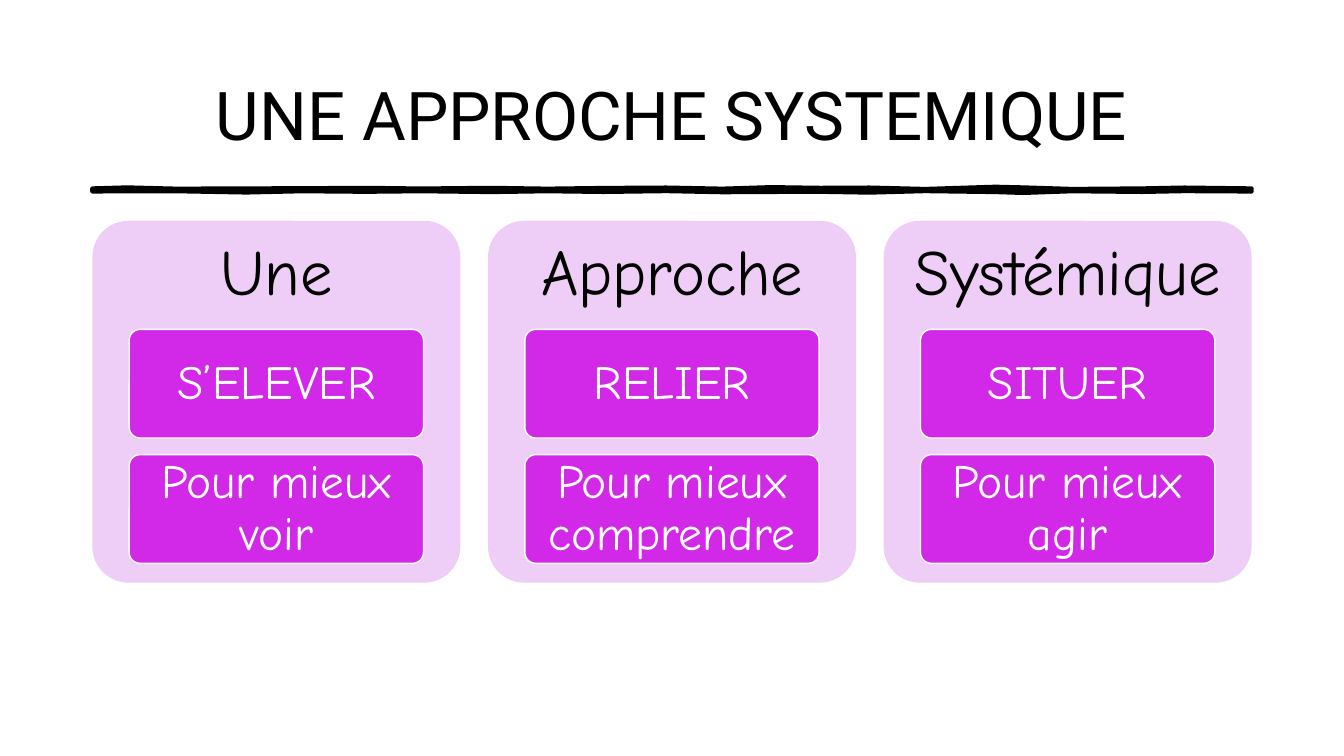
from dataclasses import dataclass

from pptx import Presentation
from pptx.dml.color import RGBColor
from pptx.enum.shapes import MSO_SHAPE
from pptx.enum.text import MSO_ANCHOR, MSO_AUTO_SIZE, PP_ALIGN
from pptx.shapes.autoshape import Shape
from pptx.slide import Slide
from pptx.util import Pt

BLACK, WHITE = "000000", "FFFFFF"
LILAC, MAGENTA = "EECDF6", "D129E7"
TITLE_FONT, BODY_FONT = "Roboto", "Comic Neue"

LEFT, CONTENT_WIDTH = 66, 828
CARD_TOP, CARD_WIDTH, CARD_HEIGHT = 157.7, 262.8, 258.5
CARD_PITCH = (CONTENT_WIDTH - CARD_WIDTH) / 2
HEADING_HEIGHT = 77.6
BOX_WIDTH, BOX_HEIGHT, BOX_PITCH = 210.2, 77.6, 89.5

# Brush stroke: distance along the rule, top edge and bottom edge
STROKE = [
    (0, 134.6, 136.8), (25, 133.9, 136.6), (60, 134.8, 136.6),
    (110, 134.6, 137.5), (150, 134.5, 136.6), (195, 134.2, 137.0),
    (235, 134.7, 136.6), (285, 134.2, 137.2), (325, 134.8, 136.6),
    (365, 134.3, 137.1), (410, 134.0, 136.5), (450, 134.8, 137.3),
    (485, 133.7, 137.1), (520, 134.2, 137.0), (555, 134.0, 137.6),
    (595, 135.0, 136.5), (645, 133.4, 137.2), (665, 133.9, 137.8),
    (700, 135.0, 136.6), (750, 134.6, 137.1), (780, 134.0, 136.5),
    (828, 134.6, 136.8),
]


@dataclass
class Card:
    heading: str
    boxes: tuple[str, str]


CARDS = [
    Card("Une", ("S’ELEVER", "Pour mieux voir")),
    Card("Approche", ("RELIER", "Pour mieux comprendre")),
    Card("Systémique", ("SITUER", "Pour mieux agir")),
]


def color(value: str) -> RGBColor:
    return RGBColor.from_string(value)


def write(shape: Shape, text: str, font: str, size: float, ink: str,
          insets: tuple[float, float], spacing: float) -> None:
    frame = shape.text_frame
    frame.word_wrap = True
    frame.auto_size = MSO_AUTO_SIZE.NONE
    frame.vertical_anchor = MSO_ANCHOR.MIDDLE
    frame.margin_left = frame.margin_right = Pt(insets[0])
    frame.margin_top = frame.margin_bottom = Pt(insets[1])
    paragraph = frame.paragraphs[0]
    paragraph.alignment = PP_ALIGN.CENTER
    paragraph.line_spacing = spacing
    run = paragraph.add_run()
    run.text = text
    run.font.name = font
    run.font.size = Pt(size)
    run.font.color.rgb = color(ink)


def add_panel(slide: Slide, left: float, top: float, width: float,
              height: float, fill: str, line: str | None = None) -> Shape:
    panel = slide.shapes.add_shape(
        MSO_SHAPE.ROUNDED_RECTANGLE, Pt(left), Pt(top), Pt(width), Pt(height))
    panel.adjustments[0] = 0.1
    panel.shadow.inherit = False
    panel.fill.solid()
    panel.fill.fore_color.rgb = color(fill)
    if line:
        panel.line.color.rgb = color(line)
        panel.line.width = Pt(1)
    else:
        panel.line.fill.background()
    return panel


def add_stroke(slide: Slide) -> None:
    top_edge = [(Pt(LEFT + x), Pt(top)) for x, top, _ in STROKE]
    bottom_edge = [(Pt(LEFT + x), Pt(bottom)) for x, _, bottom in STROKE]
    builder = slide.shapes.build_freeform(*top_edge[0])
    builder.add_line_segments(top_edge[1:] + bottom_edge[::-1], close=True)
    stroke = builder.convert_to_shape()
    stroke.shadow.inherit = False
    stroke.fill.solid()
    stroke.fill.fore_color.rgb = color(BLACK)
    stroke.line.color.rgb = color(BLACK)
    stroke.line.width = Pt(3)


def add_card(slide: Slide, card: Card, left: float) -> None:
    add_panel(slide, left, CARD_TOP, CARD_WIDTH, CARD_HEIGHT, LILAC)
    heading = slide.shapes.add_textbox(
        Pt(left), Pt(CARD_TOP), Pt(CARD_WIDTH), Pt(HEADING_HEIGHT))
    write(heading, card.heading, BODY_FONT, 46, BLACK, (13.8, 13.8), 0.9)
    box_left = left + (CARD_WIDTH - BOX_WIDTH) / 2
    for row, text in enumerate(card.boxes):
        box_top = CARD_TOP + HEADING_HEIGHT + row * BOX_PITCH
        box = add_panel(slide, box_left, box_top, BOX_WIDTH, BOX_HEIGHT,
                        MAGENTA, WHITE)
        write(box, text, BODY_FONT, 34, WHITE, (6.5, 5), 0.9)


def main() -> None:
    presentation = Presentation()
    presentation.slide_width, presentation.slide_height = Pt(960), Pt(540)
    slide = presentation.slides.add_slide(presentation.slide_layouts[5])

    # Title and brush stroke
    title = slide.shapes.title
    title.left, title.top = Pt(LEFT), Pt(28.8)
    title.width, title.height = Pt(CONTENT_WIDTH), Pt(104.4)
    write(title, "UNE APPROCHE SYSTEMIQUE", TITLE_FONT, 48, BLACK, (7.2, 3.6), 1.0)
    add_stroke(slide)

    # Three cards
    for column, card in enumerate(CARDS):
        add_card(slide, card, LEFT + column * CARD_PITCH)

    presentation.save("out.pptx")


if __name__ == "__main__":
    main()
